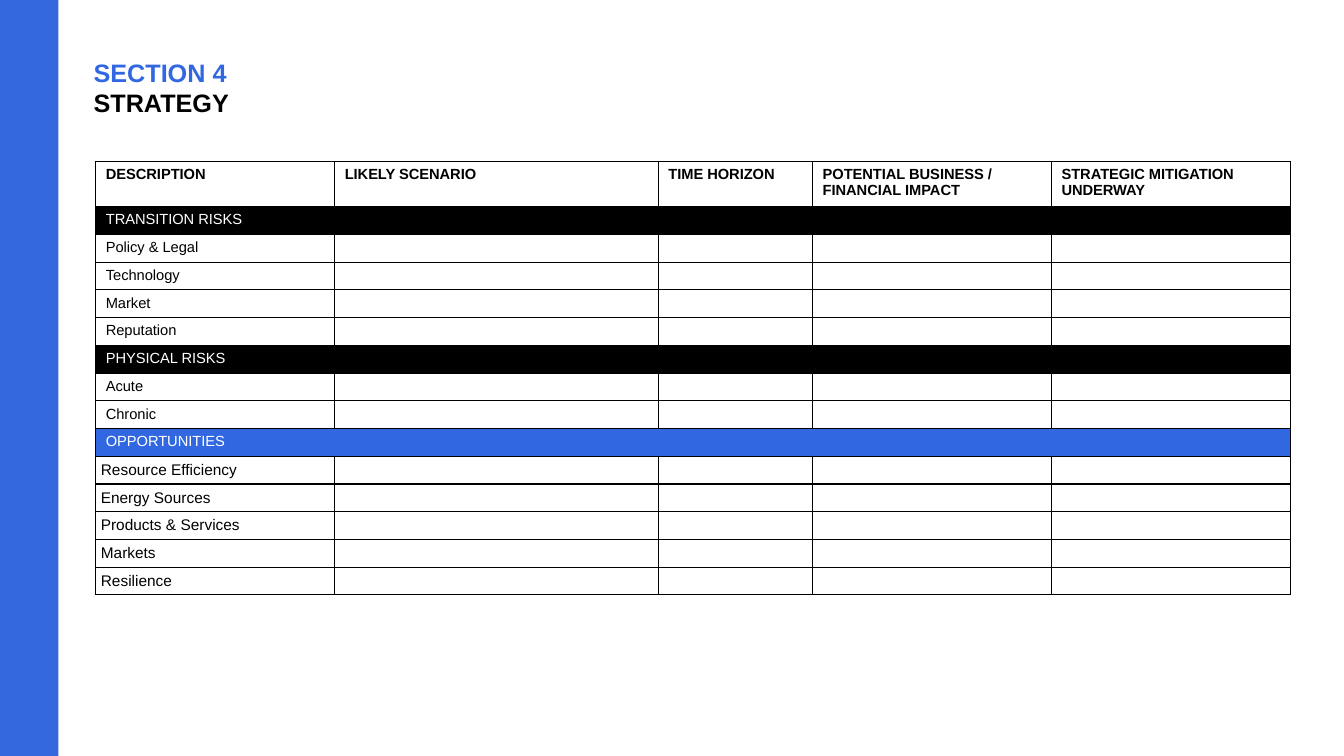
import lxml.etree
import pptx
import pptx.dml.color
import pptx.enum.shapes
import pptx.enum.text
import pptx.oxml.ns
import pptx.util

Inches = pptx.util.Inches
Pt = pptx.util.Pt
qn = pptx.oxml.ns.qn

FONT = "Arial"
COLORS = {
    "bar": "3468DD",
    "accent": "3168E2",
    "black": "000000",
    "white": "FFFFFF",
}
COLUMN_WIDTHS = [2.37, 3.21, 1.53, 2.37, 2.37]
HEADER_HEIGHT = 0.45
HEADERS = [
    "DESCRIPTION",
    "LIKELY SCENARIO",
    "TIME HORIZON",
    "POTENTIAL BUSINESS / FINANCIAL IMPACT",
    "STRATEGIC MITIGATION UNDERWAY",
]
RISK_STYLE = {"size": 10.5}
OPPORTUNITY_STYLE = {"size": 11, "middle": True, "insets": (0.05, 0.03)}
SECTIONS = [
    ("TRANSITION RISKS", "black", RISK_STYLE,
     ["Policy & Legal", "Technology", "Market", "Reputation"]),
    ("PHYSICAL RISKS", "black", RISK_STYLE, ["Acute", "Chronic"]),
    ("OPPORTUNITIES", "accent", OPPORTUNITY_STYLE,
     ["Resource Efficiency", "Energy Sources", "Products & Services",
      "Markets", "Resilience"]),
]


def rgb(name):
    return pptx.dml.color.RGBColor.from_string(COLORS[name])


def write_text(paragraph, text, size=10.5, color="black", bold=False):
    run = paragraph.add_run()
    run.text = text
    run.font.name = FONT
    run.font.size = Pt(size)
    run.font.bold = bold
    run.font.color.rgb = rgb(color)


def add_side_bar(slide, left, top, width, height):
    bar = slide.shapes.add_shape(
        pptx.enum.shapes.MSO_SHAPE.RECTANGLE,
        Inches(left), Inches(top), Inches(width), Inches(height))
    bar.shadow.inherit = False
    bar.fill.solid()
    bar.fill.fore_color.rgb = rgb("bar")
    bar.line.fill.background()


def add_title(slide, left, top, width, height):
    box = slide.shapes.add_textbox(
        Inches(left), Inches(top), Inches(width), Inches(height))
    frame = box.text_frame
    frame.word_wrap = True
    write_text(frame.paragraphs[0], "SECTION 4", size=18, color="accent", bold=True)
    write_text(frame.add_paragraph(), "STRATEGY", size=18, bold=True)


def add_borders(cell):
    properties = cell._tc.get_or_add_tcPr()
    for side in ("a:lnL", "a:lnR", "a:lnT", "a:lnB"):
        line = lxml.etree.SubElement(properties, qn(side), w=str(Pt(1)))
        fill = lxml.etree.SubElement(line, qn("a:solidFill"))
        lxml.etree.SubElement(fill, qn("a:srgbClr"), val=COLORS["black"])


def fill_cell(cell, text="", fill="white", insets=(0.1, 0.05), middle=False,
              **text_format):
    add_borders(cell)
    cell.fill.solid()
    cell.fill.fore_color.rgb = rgb(fill)
    cell.margin_left = cell.margin_right = Inches(insets[0])
    cell.margin_top = cell.margin_bottom = Inches(insets[1])
    if middle:
        cell.vertical_anchor = pptx.enum.text.MSO_ANCHOR.MIDDLE
    paragraph = cell.text_frame.paragraphs[0]
    if text:
        write_text(paragraph, text, **text_format)
    else:
        lxml.etree.SubElement(paragraph._p, qn("a:endParaRPr"), sz="1050")


def fill_row(table, row, texts, **cell_format):
    for column, text in enumerate(texts):
        fill_cell(table.cell(row, column), text, **cell_format)


def add_strategy_table(slide, left, top, width, height):
    row_count = 1 + sum(1 + len(items) for *_, items in SECTIONS)
    column_count = len(COLUMN_WIDTHS)
    table = slide.shapes.add_table(
        row_count, column_count,
        Inches(left), Inches(top), Inches(width), Inches(height)).table
    table.first_row = False
    table.horz_banding = False
    for column, column_width in zip(table.columns, COLUMN_WIDTHS):
        column.width = Inches(column_width)
    for row in table.rows:
        row.height = Inches((height - HEADER_HEIGHT) / (row_count - 1))
    table.rows[0].height = Inches(HEADER_HEIGHT)

    blanks = [""] * (column_count - 1)
    fill_row(table, 0, HEADERS, bold=True)
    row = 1
    for heading, color, style, items in SECTIONS:
        fill_row(table, row, [heading] + blanks, fill=color, color="white")
        table.cell(row, 0).merge(table.cell(row, column_count - 1))
        for row, item in enumerate(items, row + 1):
            fill_row(table, row, [item] + blanks, **style)
        row += 1


def main():
    presentation = pptx.Presentation()
    presentation.slide_width = Inches(13.33)
    presentation.slide_height = Inches(7.5)
    slide = presentation.slides.add_slide(presentation.slide_layouts[6])
    add_side_bar(slide, 0, 0, 0.58, 7.5)
    add_title(slide, 0.83, 0.52, 6.68, 0.71)
    add_strategy_table(slide, 0.95, 1.6, sum(COLUMN_WIDTHS), 4.3)
    presentation.save("out.pptx")


if __name__ == "__main__":
    main()
